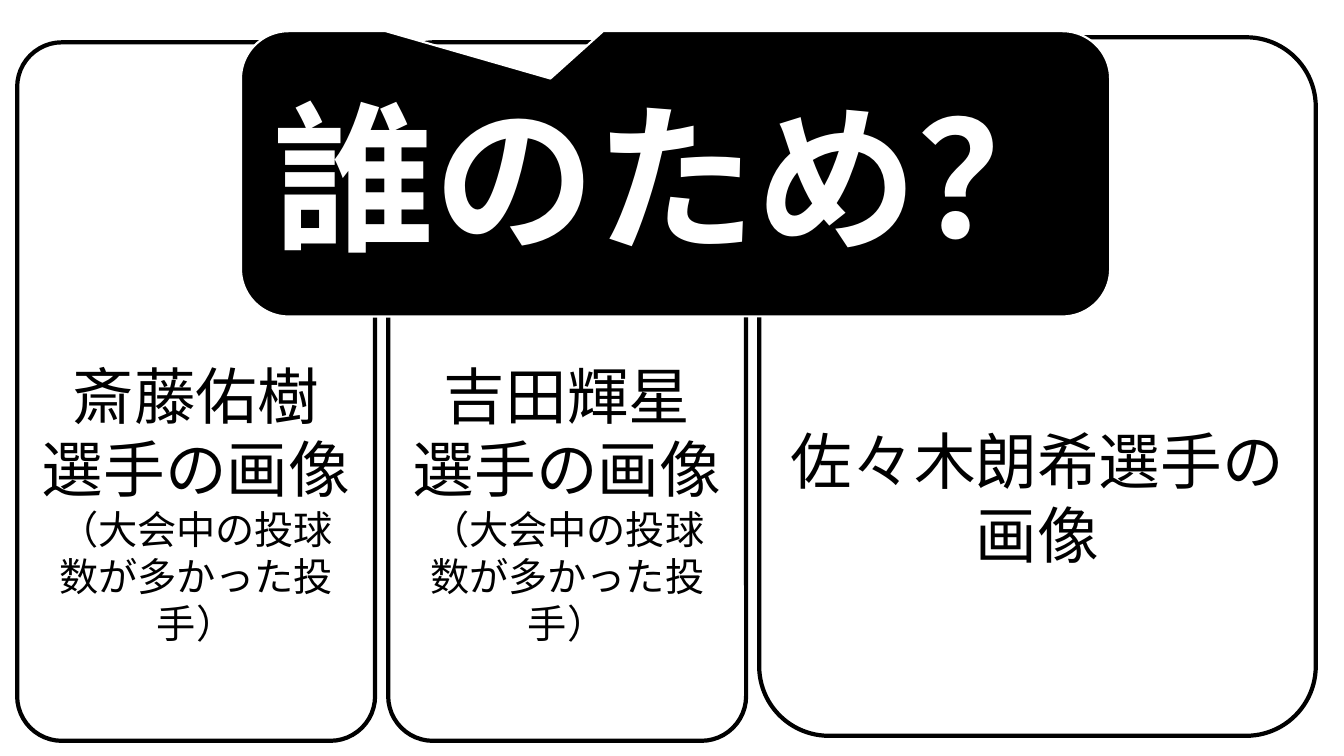
from pptx import Presentation
from pptx.dml.color import RGBColor
from pptx.enum.shapes import MSO_SHAPE as Kind
from pptx.enum.text import MSO_ANCHOR as Anchor, PP_ALIGN as Align
from pptx.util import Inches, Pt

BLACK, WHITE = "000000", "FFFFFF"
NOTE = ("（大会中の投球数が多かった投手）", 28)
LEFT, TOP, GAP, HIGH = 0.17, 0.42, 0.13, 6.93
CARDS = [
    (3.55, 0, [("斎藤佑樹", 44), ("選手の画像", 44), NOTE]),
    (3.55, 0, [("吉田輝星", 44), ("選手の画像", 44), NOTE]),
    (5.52, -0.05, [("佐々木朗希選手の画像", 44)]),
]


def paint(color, value):
    """Set a colour format from a hex string."""
    color.rgb = RGBColor.from_string(value)


def add_box(slide, kind, box, adjust, fill, line, width):
    """Draw a filled, outlined preset shape in the given box."""
    shape = slide.shapes.add_shape(kind, *map(Inches, box))
    shape.shadow.inherit = False
    for index, value in enumerate(adjust):
        shape.adjustments[index] = value
    shape.fill.solid()
    paint(shape.fill.fore_color, fill)
    paint(shape.line.color, line)
    shape.line.width = Pt(width)
    return shape


def write(shape, lines, color, bold=False):
    """Write centred lines, each a pair of text and size."""
    frame = shape.text_frame
    frame.word_wrap = True
    frame.vertical_anchor = Anchor.MIDDLE
    for index, (text, size) in enumerate(lines):
        para = frame.add_paragraph() if index else frame.paragraphs[0]
        para.text = text
        para.alignment = Align.CENTER
        font = para.font
        font.name, font.size, font.bold = "Quicksand", Pt(size), bold
        paint(font.color, color)


def add_card(slide, box, lines):
    """Draw a player card with its text below the title's reach."""
    card = add_box(slide, Kind.ROUNDED_RECTANGLE, box, [0.125], WHITE, BLACK, 3)
    card.text_frame.margin_top = Inches(2.24)
    write(card, lines, BLACK)


def add_title(slide, box):
    """Draw the black speech bubble that holds the question."""
    title = add_box(slide, Kind.ROUNDED_RECTANGULAR_CALLOUT, box,
                    [-0.144, -0.334, 0.167], BLACK, WHITE, 1.5)
    write(title, [("誰のため？", 115)], WHITE, bold=True)


def main():
    """Build the slide and save it."""
    deck = Presentation()
    deck.slide_width, deck.slide_height = Inches(13.33), Inches(7.5)
    slide = deck.slides.add_slide(deck.slide_layouts[6])
    left = LEFT
    for wide, shift, lines in CARDS:
        add_card(slide, (left, TOP + shift, wide, HIGH), lines)
        left += wide + GAP
    add_title(slide, (2.39, 0.31, 8.62, 2.83))
    deck.save("out.pptx")


if __name__ == "__main__":
    main()
